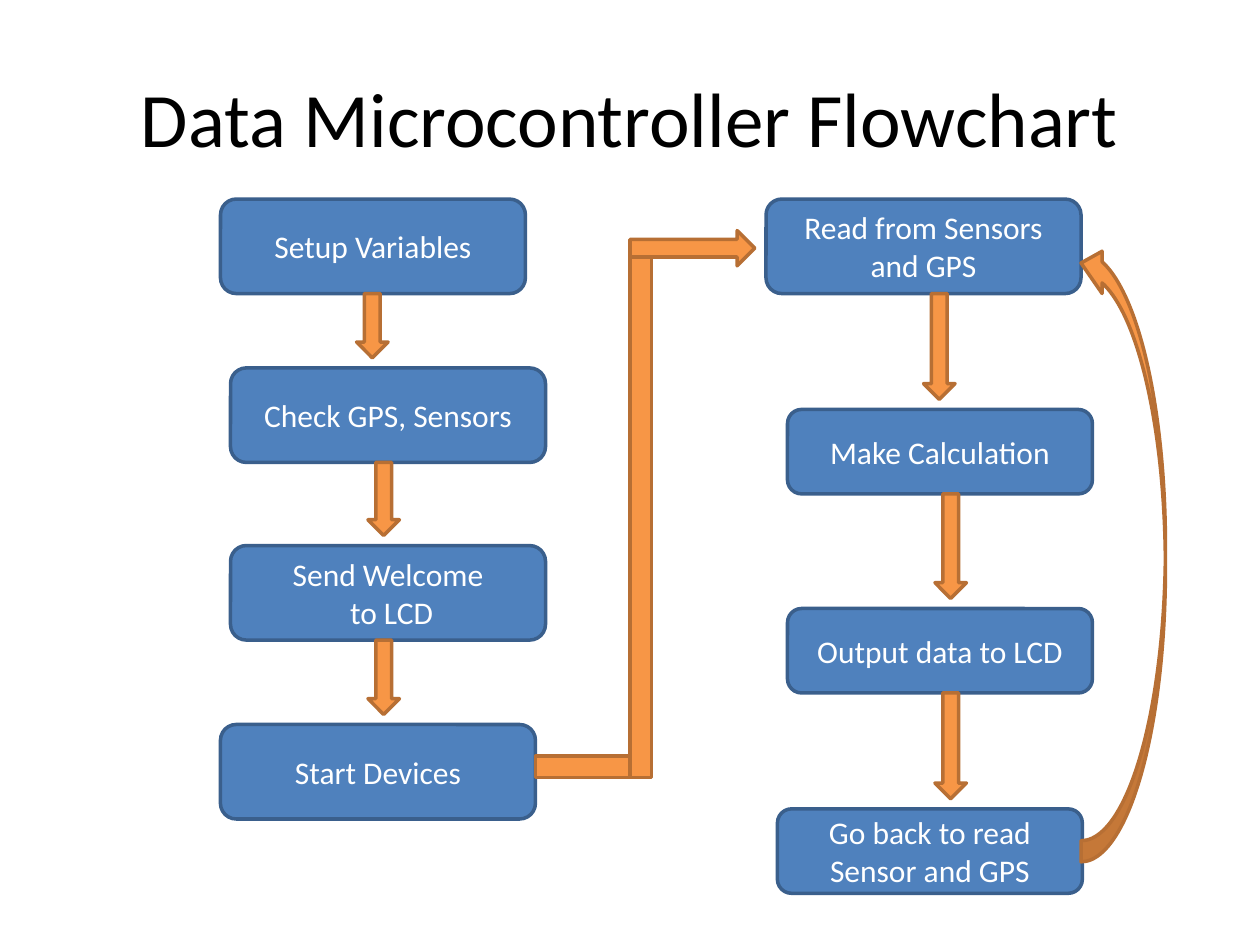
import pptx
import pptx.util
import pptx.dml.color
import pptx.enum.shapes
import pptx.enum.text

Inches = pptx.util.Inches
Preset = pptx.enum.shapes.MSO_SHAPE

COLORS = {
    "title": "000000",
    "step": "4F81BD",
    "step_line": "3A5F8C",
    "step_text": "FFFFFF",
    "arrow": "F79646",
    "arrow_line": "B76F34",
}
ARROW_WIDTH = 0.25
ARROW_GAP = 0.08
BAR = 0.17


def rgb(name):
    return pptx.dml.color.RGBColor.from_string(COLORS[name])


def add_block(slide, preset, box, color):
    block = slide.shapes.add_shape(preset, *map(Inches, box))
    block.shadow.inherit = False
    block.fill.solid()
    block.fill.fore_color.rgb = rgb(color)
    block.line.color.rgb = rgb(color + "_line")
    block.line.width = pptx.util.Pt(2)
    return block


def write(block, text, size, color):
    frame = block.text_frame
    frame.word_wrap = True
    frame.vertical_anchor = pptx.enum.text.MSO_ANCHOR.MIDDLE
    frame.text = text
    for paragraph in frame.paragraphs:
        paragraph.alignment = pptx.enum.text.PP_ALIGN.CENTER
        for run in paragraph.runs:
            run.font.size = pptx.util.Pt(size)
            run.font.name = "Calibri"
            run.font.color.rgb = rgb(color)


def add_title(slide, box):
    title = slide.shapes.add_textbox(*map(Inches, box))
    write(title, "Data Microcontroller Flowchart", 44, "title")


def add_column(slide, box, step_height, arrow_lefts, steps):
    left, top, _, _ = box
    for text, dx, dy, width in steps:
        step = add_block(slide, Preset.ROUNDED_RECTANGLE,
                         (left + dx, top + dy, width, step_height(dy)), "step")
        write(step, text, 18, "step_text")
    for arrow_left, current, following in zip(arrow_lefts, steps, steps[1:]):
        start = current[2] + step_height(current[2])
        length = following[2] - ARROW_GAP - start
        add_block(slide, Preset.DOWN_ARROW,
                  (left + arrow_left, top + start, ARROW_WIDTH, length), "arrow")


def add_link(slide, box):
    left, top, width, height = box
    riser_left = left + 0.75
    bottom = top + height
    add_block(slide, Preset.RECTANGLE, (left, bottom - BAR, 0.83, BAR), "arrow")
    add_block(slide, Preset.RECTANGLE,
              (riser_left, top + 0.09, BAR, height - 0.09), "arrow")
    add_block(slide, Preset.RIGHT_ARROW,
              (riser_left, top, left + width - riser_left, 0.28), "arrow")


def add_return_loop(slide, box):
    loop = add_block(slide, Preset.CURVED_LEFT_ARROW, box, "arrow")
    loop.element.spPr.xfrm.set("flipV", "1")


def main():
    deck = pptx.Presentation()
    deck.slide_width = Inches(10)
    deck.slide_height = Inches(7.5)
    slide = deck.slides.add_slide(deck.slide_layouts[6])

    add_title(slide, (0.5, 0.3, 9, 1.25))
    add_column(slide, (1.75, 1.58, 2.58, 4.92), lambda dy: 0.75,
               (1.08, 1.17, 1.17), [
                   ("Setup Variables", 0, 0, 2.42),
                   ("Check GPS, Sensors", 0.08, 1.34, 2.5),
                   ("Send Welcome\n to LCD", 0.08, 2.75, 2.5),
                   ("Start Devices", 0, 4.17, 2.5),
               ])
    add_column(slide, (6.08, 1.58, 2.59, 5.51), lambda dy: 0.67 if dy else 0.75,
               (1.25, 1.34, 1.34), [
                   ("Read from Sensors and GPS", 0, 0, 2.5),
                   ("Make Calculation", 0.17, 1.67, 2.42),
                   ("Output data to LCD", 0.17, 3.25, 2.42),
                   ("Go back to read Sensor and GPS", 0.09, 4.84, 2.42),
               ])
    add_return_loop(slide, (8.58, 1.92, 0.67, 4.92))
    add_link(slide, (4.25, 1.83, 1.74, 4.34))
    deck.save("out.pptx")


if __name__ == "__main__":
    main()
